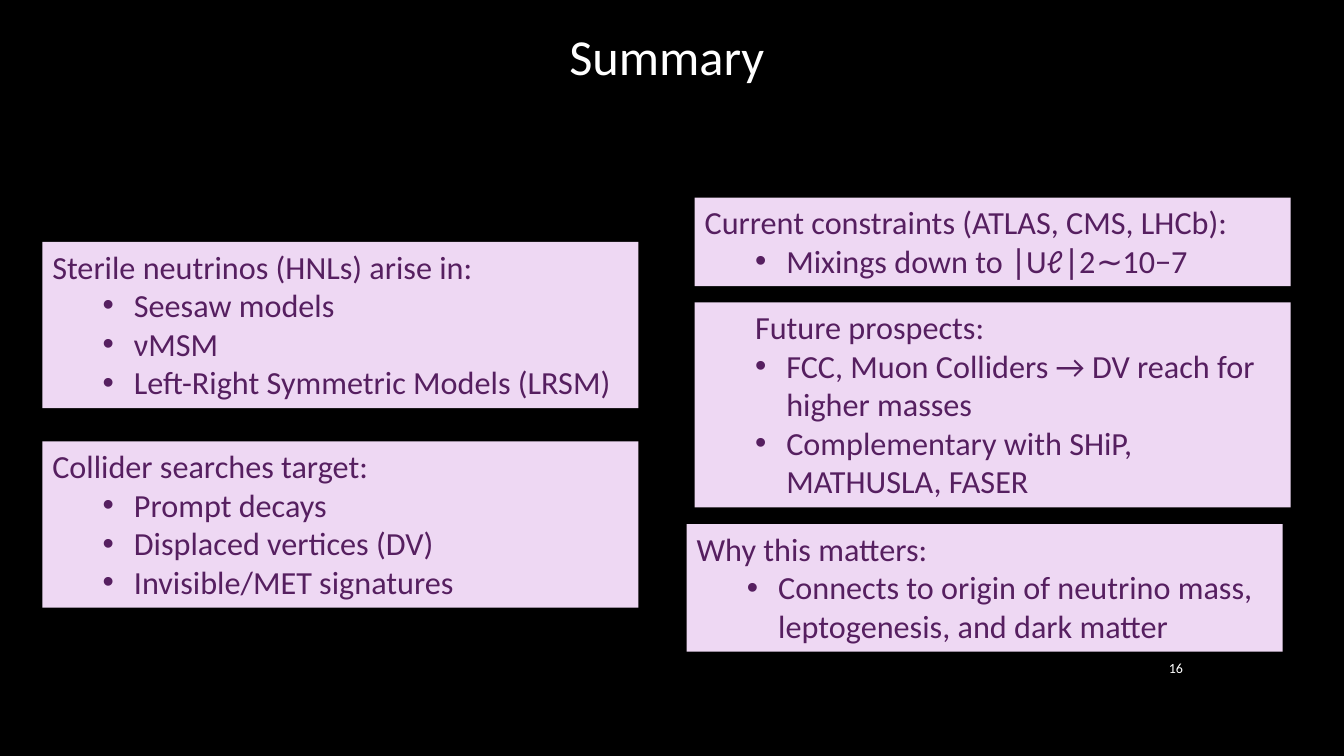
from dataclasses import dataclass
from typing import Any

from lxml import etree
from pptx import Presentation
from pptx import util as u
from pptx.dml.color import RGBColor
from pptx.enum import shapes, text
from pptx.oxml import ns


@dataclass(frozen=True)
class Theme:
    background: RGBColor = RGBColor(0, 0, 0)
    light: RGBColor = RGBColor(255, 255, 255)
    card: RGBColor = RGBColor(0xEE, 0xD8, 0xF3)
    ink: RGBColor = RGBColor(0x56, 0x1F, 0x60)
    face: str = "Calibri"
    title_size: float = 36
    body_size: float = 23
    number_size: float = 10


@dataclass(frozen=True)
class Area:
    left: float
    top: float
    width: float
    height: float


@dataclass(frozen=True)
class Card:
    left: float
    top: float
    lines: int
    heading: str
    points: tuple[str, ...]
    heading_level: int = 0


THEME = Theme()
WIDTH, HEIGHT = u.Inches(13.33), u.Inches(7.5)
LEFT_COLUMN, RIGHT_COLUMN, CLOSING_COLUMN = 3.15, 51.69, 51.09
CARD_WIDTH, LINE_HEIGHT, CARD_PADDING = 44.34, 5.13, 1.47
HEADING_INDENT, POINT_INDENT, HANGING = 0.5, 0.81, -0.31

TITLE_AREA = Area(8.48, -3.33, 83.12, 21.2)
NUMBER_AREA = Area(84.25, 85.6, 4.5, 5.47)
CARDS = (
    Card(RIGHT_COLUMN, 26.13, 2, "Current constraints (ATLAS, CMS, LHCb):",
         ("Mixings down to ∣Uℓ∣2∼10−7",)),
    Card(LEFT_COLUMN, 32, 4, "Sterile neutrinos (HNLs) arise in:",
         ("Seesaw models", "νMSM", "Left-Right Symmetric Models (LRSM)")),
    Card(CLOSING_COLUMN, 69.33, 3, "Why this matters:",
         ("Connects to origin of neutrino mass, leptogenesis, and dark matter",)),
    Card(RIGHT_COLUMN, 40, 5, "Future prospects:",
         ("FCC, Muon Colliders → DV reach for higher masses",
          "Complementary with SHiP, MATHUSLA, FASER"), 1),
    Card(LEFT_COLUMN, 58.4, 4, "Collider searches target:",
         ("Prompt decays", "Displaced vertices (DV)", "Invisible/MET signatures")),
)


def apply(target: Any, formats: dict[str, Any]) -> None:
    for name, value in formats.items():
        setattr(target, name, value)


def place(area: Area) -> dict[str, int]:
    return {
        "left": int(WIDTH * area.left / 100),
        "top": int(HEIGHT * area.top / 100),
        "width": int(WIDTH * area.width / 100),
        "height": int(HEIGHT * area.height / 100),
    }


def write(paragraph: Any, words: str, size: float, color: RGBColor,
          align: Any, level: int = 0) -> None:
    paragraph.text = words
    apply(paragraph, {"alignment": align, "level": level})
    apply(paragraph.font, {"name": THEME.face, "size": u.Pt(size), "bold": False})
    paragraph.font.color.rgb = color


def indent(paragraph: Any, margin: float, hanging: float = 0, bullet: str = "") -> None:
    properties = paragraph._p.get_or_add_pPr()
    properties.set("marL", str(u.Inches(margin)))
    properties.set("indent", str(u.Inches(hanging)))
    if bullet:
        etree.SubElement(properties, ns.qn("a:buFont")).set("typeface", "Arial")
        etree.SubElement(properties, ns.qn("a:buChar")).set("char", bullet)


def draw_card(slide: Any, card: Card) -> None:
    area = Area(card.left, card.top, CARD_WIDTH,
                card.lines * LINE_HEIGHT + CARD_PADDING)
    panel = slide.shapes.add_shape(shapes.MSO_SHAPE.RECTANGLE, **place(area))
    panel.shadow.inherit = False
    panel.fill.solid()
    panel.fill.fore_color.rgb = THEME.card
    panel.line.fill.background()
    frame = panel.text_frame
    apply(frame, {"word_wrap": True, "vertical_anchor": text.MSO_ANCHOR.TOP,
                  "auto_size": text.MSO_AUTO_SIZE.SHAPE_TO_FIT_TEXT})
    style = (THEME.body_size, THEME.ink, text.PP_ALIGN.LEFT)
    heading = frame.paragraphs[0]
    indent(heading, HEADING_INDENT * card.heading_level)
    write(heading, card.heading, *style, card.heading_level)
    for words in card.points:
        point = frame.add_paragraph()
        indent(point, POINT_INDENT, HANGING, "•")
        write(point, words, *style, 1)


def draw_line(holder: Any, words: str, size: float, align: Any) -> None:
    apply(holder.text_frame, {"word_wrap": True,
                              "vertical_anchor": text.MSO_ANCHOR.MIDDLE})
    write(holder.text_frame.paragraphs[0], words, size, THEME.light, align)


def main() -> None:
    deck = Presentation()
    apply(deck, {"slide_width": WIDTH, "slide_height": HEIGHT})
    slide = deck.slides.add_slide(deck.slide_layouts.get_by_name("Title Only"))
    slide.background.fill.solid()
    slide.background.fill.fore_color.rgb = THEME.background
    title = slide.shapes.title
    apply(title, place(TITLE_AREA))
    draw_line(title, "Summary ", THEME.title_size, text.PP_ALIGN.CENTER)
    for card in CARDS:
        draw_card(slide, card)
    number = slide.shapes.add_textbox(**place(NUMBER_AREA))
    draw_line(number, "16", THEME.number_size, text.PP_ALIGN.RIGHT)
    deck.save("out.pptx")


if __name__ == "__main__":
    main()
